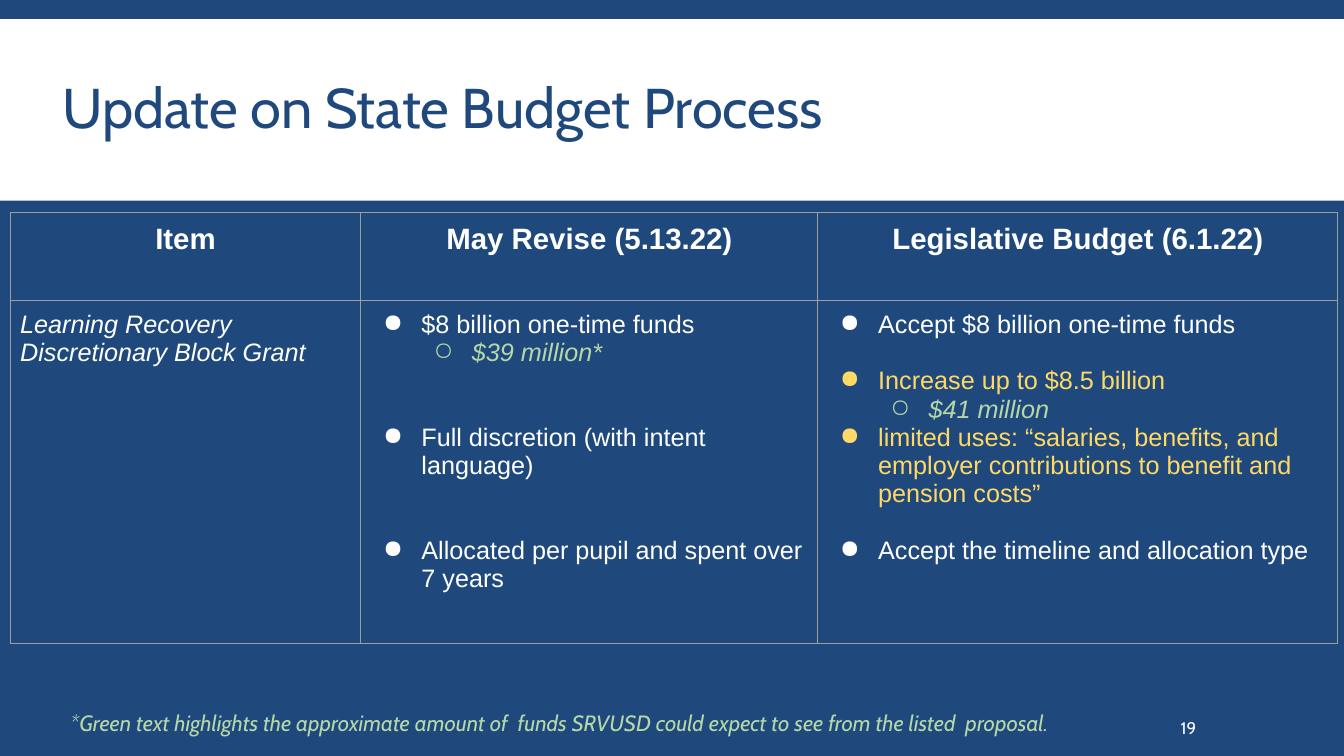
import dataclasses

import pptx
import pptx.dml.color
import pptx.enum.shapes
import pptx.enum.text
import pptx.oxml
import pptx.oxml.ns
import pptx.util

Inches = pptx.util.Inches
Align = pptx.enum.text.PP_ALIGN
Anchor = pptx.enum.text.MSO_ANCHOR


@dataclasses.dataclass(frozen=True)
class Theme:
    navy: str = "1F497D"
    white: str = "FFFFFF"
    green: str = "B6D7A8"
    yellow: str = "FFD966"
    rule: str = "9E9E9E"
    heading_font: str = "Cabin"
    body_font: str = "Arial"
    title: float = 40
    header: float = 21
    body: float = 18
    note: float = 15.8
    number: float = 12
    line: float = 20.2


THEME = Theme()
COLUMNS = (3.48, 4.53, 5.16)
ROWS = (0.87, 3.4)
HEADERS = ("Item", "May Revise (5.13.22)", "Legislative Budget (6.1.22)")
ITEM = "Learning Recovery Discretionary Block Grant"

# Each point: text, level, colour, blank lines above
MAY_REVISE = (
    ("$8 billion one-time funds", 0, THEME.white, 0),
    ("$39 million*", 1, THEME.green, 0),
    ("Full discretion (with intent language)", 0, THEME.white, 2),
    ("Allocated per pupil and spent over 7 years", 0, THEME.white, 2),
)
LEGISLATIVE = (
    ("Accept $8 billion one-time funds", 0, THEME.white, 0),
    ("Increase up to $8.5 billion", 0, THEME.yellow, 1),
    ("$41 million", 1, THEME.green, 0),
    ("limited uses: “salaries, benefits, and employer contributions to "
     "benefit and pension costs”", 0, THEME.yellow, 0),
    ("Accept the timeline and allocation type", 0, THEME.white, 1),
)


def rgb(value):
    return pptx.dml.color.RGBColor.from_string(value)


def xml(markup):
    tag, rest = markup[1:].split(" ", 1)
    return pptx.oxml.parse_xml(f"<{tag} {pptx.oxml.ns.nsdecls('a')} {rest}")


def write(para, text, size=THEME.body, font=THEME.body_font, color=THEME.white,
          bold=False, italic=False, align=Align.LEFT):
    para.alignment = align
    span = para.add_run()
    span.text = text
    span.font.size = pptx.util.Pt(size)
    span.font.name = font
    span.font.color.rgb = rgb(color)
    span.font.bold = bold
    span.font.italic = italic


def set_frame(frame, insets, anchor=Anchor.TOP):
    frame.word_wrap = True
    frame.auto_size = pptx.enum.text.MSO_AUTO_SIZE.NONE
    frame.vertical_anchor = anchor
    (frame.margin_left, frame.margin_top,
     frame.margin_right, frame.margin_bottom) = map(Inches, insets)


def add_text(page, box, text, insets, anchor=Anchor.TOP, **style):
    frame = page.shapes.add_textbox(*map(Inches, box)).text_frame
    set_frame(frame, insets, anchor)
    write(frame.paragraphs[0], text, **style)


def add_title(page, box, text):
    left, top, width, height = box
    title = page.shapes.title
    # White band, behind the title
    band = page.shapes.add_shape(pptx.enum.shapes.MSO_SHAPE.RECTANGLE,
                                 *map(Inches, box))
    band.shadow.inherit = False
    band.fill.solid()
    band.fill.fore_color.rgb = rgb(THEME.white)
    band.line.fill.background()
    title.element.addprevious(band.element)
    # Title text
    title.left, title.top = Inches(left + 0.52), Inches(top + 0.09)
    title.width, title.height = Inches(10.7), Inches(height - 0.15)
    set_frame(title.text_frame, (0.1, 0.05, 0.1, 0.05), Anchor.MIDDLE)
    para = title.text_frame.paragraphs[0]
    para.line_spacing = 0.85
    write(para, text, size=THEME.title, font=THEME.heading_font, color=THEME.navy)


def style_cell(cell):
    cell.margin_left = cell.margin_right = Inches(0.1)
    cell.margin_top = cell.margin_bottom = Inches(0.1)
    properties = cell._tc.get_or_add_tcPr()
    for side in "LRTB":
        properties.append(xml(
            f'<a:ln{side} w="{pptx.util.Pt(0.75)}"><a:solidFill>'
            f'<a:srgbClr val="{THEME.rule}"/></a:solidFill></a:ln{side}>'))
    cell.fill.solid()
    cell.fill.fore_color.rgb = rgb(THEME.navy)


def add_points(frame, points):
    for index, (text, level, color, gap) in enumerate(points):
        para = frame.add_paragraph() if index else frame.paragraphs[0]
        para.level = level
        properties = para._p.get_or_add_pPr()
        properties.set("marL", str(Inches(0.5 * (level + 1))))
        properties.set("indent", str(Inches(-0.38)))
        properties.append(xml(f'<a:buClr ><a:srgbClr val="{color}"/></a:buClr>'))
        properties.append(xml(f'<a:buChar char="{"●○"[level]}"/>'))
        para.space_before = pptx.util.Pt(gap * THEME.line)
        write(para, text, color=color, italic=level == 1)


def add_budget_table(page, left, top):
    table = page.shapes.add_table(
        len(ROWS), len(COLUMNS), Inches(left), Inches(top),
        Inches(sum(COLUMNS)), Inches(sum(ROWS))).table
    table.first_row = table.horz_banding = False
    for column, width in zip(table.columns, COLUMNS):
        column.width = Inches(width)
    for row, height in zip(table.rows, ROWS):
        row.height = Inches(height)
    for cell in table.iter_cells():
        style_cell(cell)
    for index, text in enumerate(HEADERS):
        write(table.cell(0, index).text_frame.paragraphs[0], text,
              size=THEME.header, bold=True, align=Align.CENTER)
    write(table.cell(1, 0).text_frame.paragraphs[0], ITEM, italic=True)
    add_points(table.cell(1, 1).text_frame, MAY_REVISE)
    add_points(table.cell(1, 2).text_frame, LEGISLATIVE)


def add_footer(page, left, top):
    add_text(page, (left, top, 12.17, 0.4),
             "*Green text highlights the approximate amount of  funds SRVUSD "
             "could expect to see from the listed  proposal.",
             (0.1, 0.1, 0.1, 0.1), size=THEME.note, font=THEME.heading_font,
             color=THEME.green, italic=True)
    add_text(page, (left + 11.06, top + 0.08, 1.03, 0.4), "19",
             (0.05, 0.05, 0.1, 0.05), Anchor.MIDDLE, size=THEME.number,
             font=THEME.heading_font)


def main():
    deck = pptx.Presentation()
    deck.slide_width, deck.slide_height = Inches(13.33), Inches(7.5)
    page = deck.slides.add_slide(deck.slide_layouts.get_by_name("Title Only"))
    page.background.fill.solid()
    page.background.fill.fore_color.rgb = rgb(THEME.navy)
    add_title(page, (0, 0.19, 13.33, 1.8), "Update on State Budget Process")
    add_budget_table(page, 0.1, 2.11)
    add_footer(page, 0.6, 6.94)
    deck.save("out.pptx")


if __name__ == "__main__":
    main()
